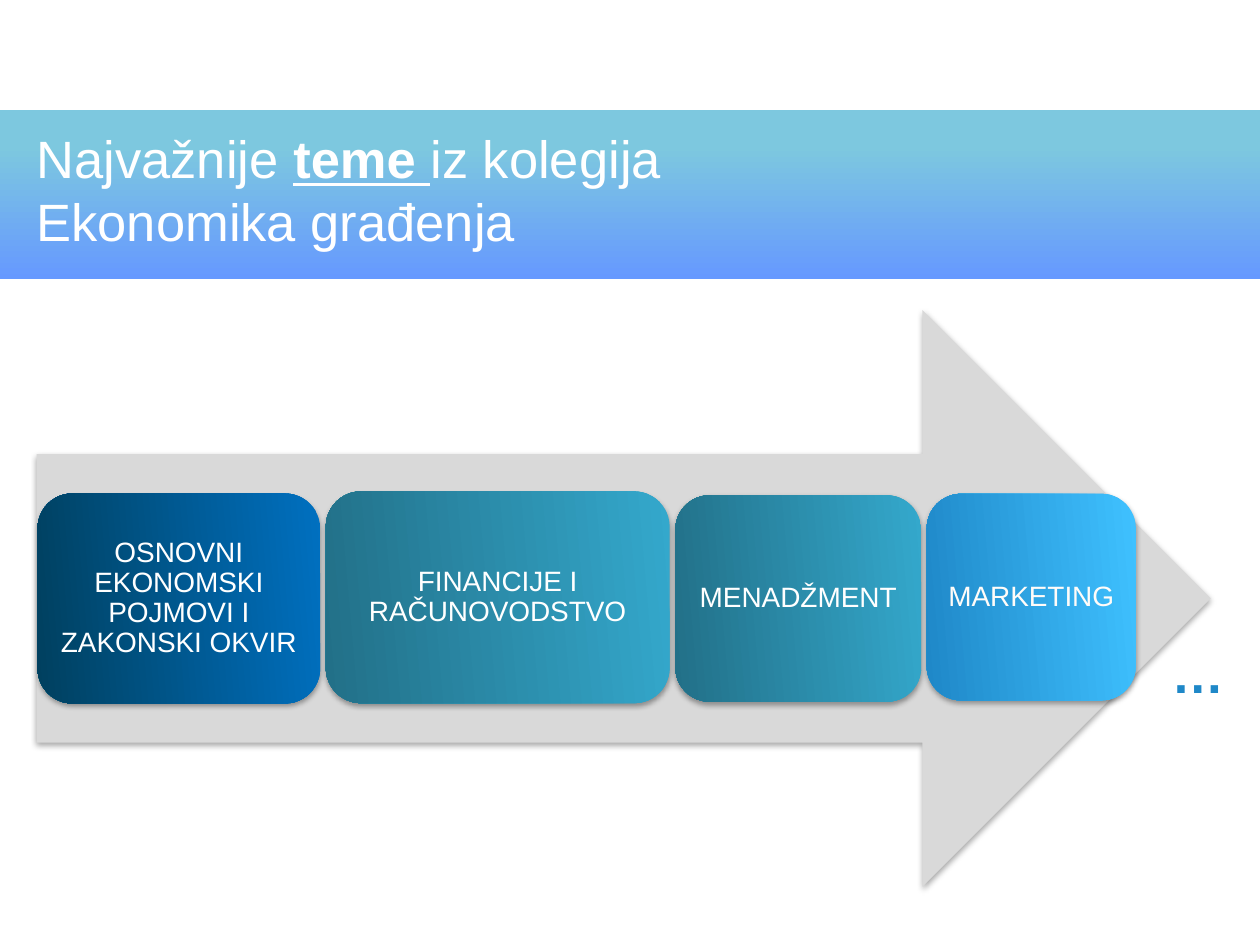
from lxml import etree
from pptx import Presentation
from pptx.dml.color import RGBColor
from pptx.enum.shapes import MSO_SHAPE
from pptx.enum.text import MSO_ANCHOR, PP_ALIGN
from pptx.oxml.ns import qn
from pptx.util import Pt

RECT, ROUND, ARROW = MSO_SHAPE.RECTANGLE, MSO_SHAPE.ROUNDED_RECTANGLE, MSO_SHAPE.RIGHT_ARROW
LEFT, CENTER = PP_ALIGN.LEFT, PP_ALIGN.CENTER
TOP, MIDDLE = MSO_ANCHOR.TOP, MSO_ANCHOR.MIDDLE

WHITE = RGBColor(0xFF, 0xFF, 0xFF)
CREAM = RGBColor(0xFF, 0xFC, 0xF9)
GRAY = RGBColor(0xD9, 0xD9, 0xD9)
AQUA = RGBColor(0x7D, 0xC8, 0xDF)
IRIS = RGBColor(0x66, 0x99, 0xFF)
BLUE = RGBColor(0x00, 0x70, 0xC0)
NAVY = RGBColor(0x00, 0x40, 0x5F)
TEAL = RGBColor(0x34, 0xA8, 0xCC)
PINE = RGBColor(0x22, 0x70, 0x88)
SKY = RGBColor(0x3F, 0xC1, 0xFF)
AZURE = RGBColor(0x1F, 0x88, 0xC8)

# Content: title runs (text, stressed) by line; topics with width, top, height
TITLE = [[("Najvažnije ", False), ("teme ", True), ("iz kolegija", False)],
         [("Ekonomika građenja", False)]]
TOPICS = [
    ("OSNOVNI EKONOMSKI POJMOVI I ZAKONSKI OKVIR", 161.5, 282, 120, BLUE, NAVY, WHITE),
    ("FINANCIJE I RAČUNOVODSTVO", 196.5, 280.8, 121, TEAL, PINE, WHITE),
    ("MENADŽMENT", 140.5, 283, 118, TEAL, PINE, WHITE),
    ("MARKETING", 119.5, 282.2, 118, SKY, AZURE, CREAM),
]
START, GAP = 21.5, 3.2


def write(para, text, size=16, color=WHITE, bold=False, under=False):
    run = para.add_run()
    run.text = text
    font = run.font
    font.name, font.size, font.bold, font.underline = "Arial", Pt(size), bold, under
    font.color.rgb = color


def draw(kind, x, y, w, h, fills, angle=0, start=0, shade=True):
    shape = slide.shapes.add_shape(kind, Pt(x), Pt(y), Pt(w), Pt(h))
    if len(fills) == 1:
        shape.fill.solid()
        shape.fill.fore_color.rgb = fills[0]
    else:
        shape.fill.gradient()
        shape.fill.gradient_angle = angle
        for stop, color, pos in zip(shape.fill.gradient_stops, fills, (start, 1)):
            stop.color.rgb, stop.position = color, pos
    shape.line.fill.background()
    shape.shadow.inherit = False
    if shade:
        effect = shape._element.spPr.find(qn("a:effectLst"))
        outer = etree.SubElement(effect, qn("a:outerShdw"), blurRad=str(Pt(3.1)),
                                 dist=str(Pt(1.8)), dir="5400000", rotWithShape="0")
        black = etree.SubElement(outer, qn("a:srgbClr"), val="000000")
        etree.SubElement(black, qn("a:alpha"), val="35000")
    return shape


deck = Presentation()
deck.slide_width, deck.slide_height = Pt(720), Pt(540)
slide = deck.slides.add_slide(deck.slide_layouts[5])

# Title band, placed behind the title
band = draw(RECT, 0, 62.8, 720, 96.8, (AQUA, IRIS), angle=270, start=0.21, shade=False)
slide.shapes._spTree.insert(2, band._element)

# Title
title = slide.shapes.title
title.left, title.top, title.width, title.height = Pt(13.7), Pt(68.5), Pt(543), Pt(80)
frame = title.text_frame
frame.word_wrap, frame.vertical_anchor = True, TOP
para = frame.paragraphs[0]
para.alignment = LEFT
for i, line in enumerate(TITLE):
    if i:
        para.add_line_break()
    for text, stress in line:
        write(para, text, size=30, bold=stress, under=stress)

# Arrow with the topics along it
draw(ARROW, 20.9, 177.2, 671, 329.6, (GRAY,))
x = START
for text, w, y, h, light, dark, ink in TOPICS:
    frame = draw(ROUND, x, y, w, h, (light, dark), angle=185).text_frame
    frame.word_wrap, frame.vertical_anchor = True, MIDDLE
    frame.margin_left = frame.margin_right = frame.margin_top = frame.margin_bottom = Pt(5)
    para = frame.paragraphs[0]
    para.alignment, para.line_spacing = CENTER, 0.9
    write(para, text, color=ink)
    x += w + GAP

# Ellipsis after the arrow
more = slide.shapes.add_textbox(Pt(662.4), Pt(363), Pt(44.6), Pt(44))
more.text_frame.word_wrap = False
write(more.text_frame.paragraphs[0], "…", size=30, color=AZURE, bold=True)

deck.save("out.pptx")
